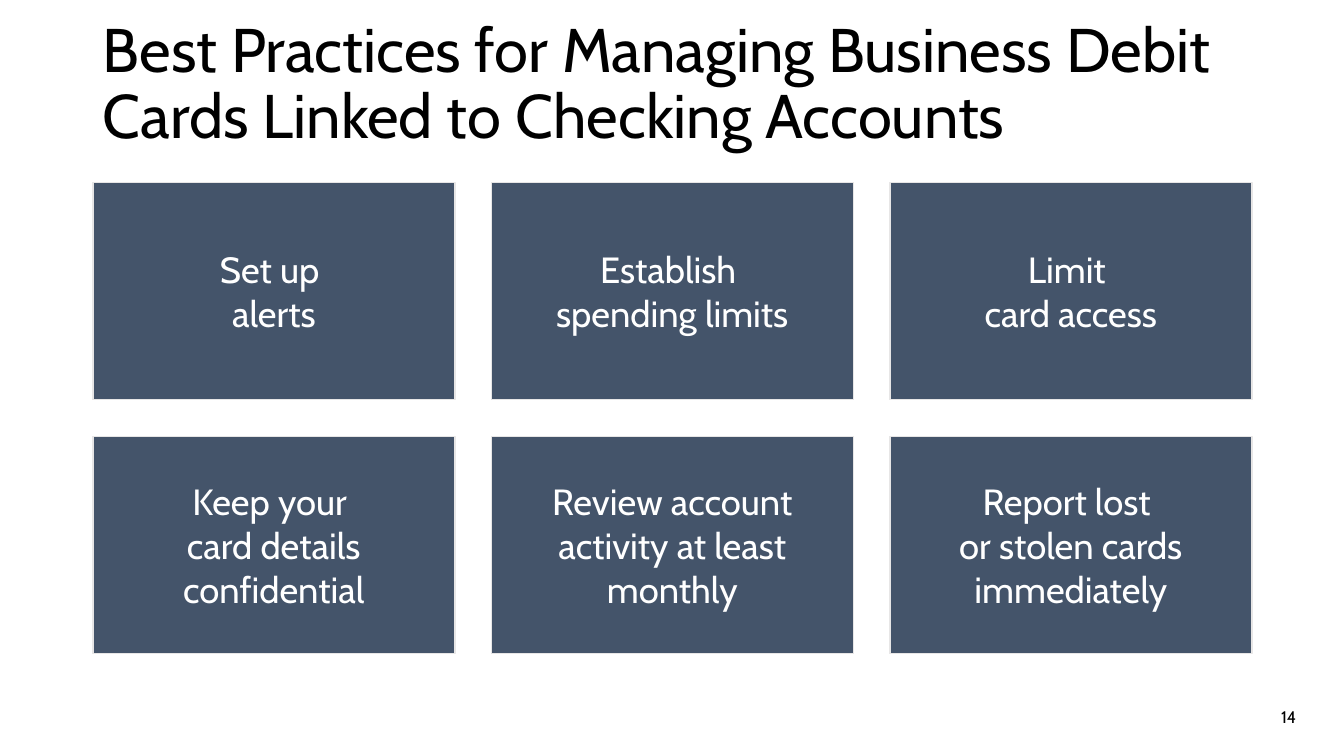
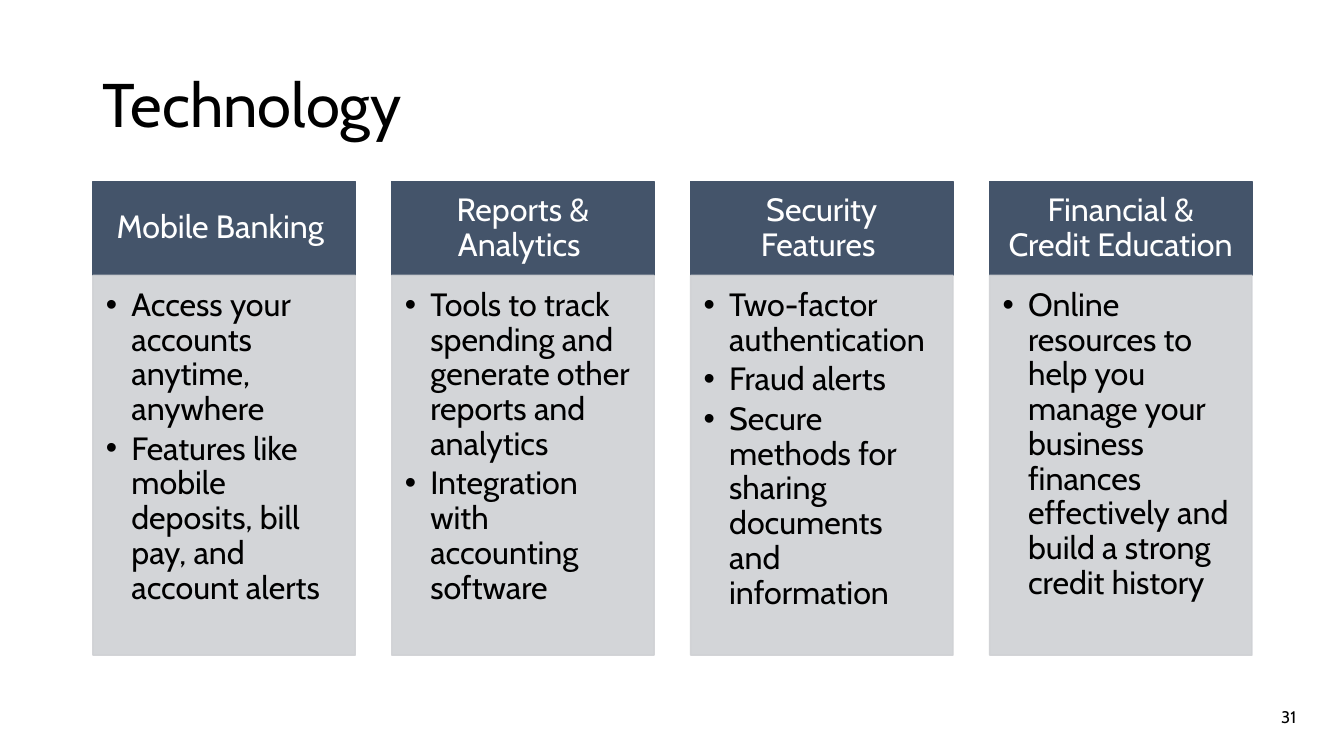
from lxml import etree
from pptx import Presentation
from pptx.dml.color import RGBColor
from pptx.enum import shapes, text
from pptx.oxml import ns
from pptx.util import Cm, Pt

NAVY = RGBColor(0x44, 0x54, 0x6A)
PALE = RGBColor(0xE7, 0xE6, 0xE6)
GREY = RGBColor(0xCF, 0xD1, 0xD4)
WHITE = RGBColor(0xFF, 0xFF, 0xFF)
BLACK = RGBColor(0, 0, 0)
FONT = "Cabin"

SLIDE_WIDTH, SLIDE_HEIGHT = Cm(33.87), Cm(19.05)
LEFT, CONTENT_WIDTH = Cm(2.34), Cm(29.21)
GAP = Cm(0.92)

TILES = [
    ["Set up ", "alerts"],
    ["Establish ", "spending limits"],
    ["Limit ", "card access"],
    ["Keep your ", "card details confidential"],
    ["Review account activity at least monthly"],
    ["Report lost ", "or stolen cards immediately"],
]
TECHNOLOGY = [
    ("Mobile Banking ", [
        "Access your accounts anytime, anywhere",
        "Features like mobile deposits, bill pay, and account alerts"]),
    ("Reports & Analytics ", [
        "Tools to track spending and generate other reports and analytics",
        "Integration with accounting software"]),
    ("Security Features ", [
        "Two-factor authentication",
        "Fraud alerts",
        "Secure methods for sharing documents and information"]),
    ("Financial & Credit Education", [
        "Online resources to help you manage your business finances "
        "effectively and build a strong credit history"]),
]


def write(shape, lines, size, color, align, anchor, line_spacing=1.0, margins=None):
    """Fill a shape with one paragraph per line; margins run left, top, right, bottom in cm."""
    frame = shape.text_frame
    frame.word_wrap = True
    frame.vertical_anchor = anchor
    if margins:
        (frame.margin_left, frame.margin_top,
         frame.margin_right, frame.margin_bottom) = map(Cm, margins)
    frame.text = "\n".join(lines)
    for paragraph in frame.paragraphs:
        paragraph.alignment = align
        paragraph.line_spacing = line_spacing
        for run in paragraph.runs:
            run.font.name = FONT
            run.font.size = Pt(size)
            run.font.color.rgb = color


def add_box(slide, box, fill, line):
    shape = slide.shapes.add_shape(shapes.MSO_SHAPE.RECTANGLE, *box)
    shape.shadow.inherit = False
    shape.fill.solid()
    shape.fill.fore_color.rgb = fill
    shape.line.color.rgb = line
    shape.line.width = Pt(1)
    return shape


def set_opacity(shape, percent):
    """Apply one opacity to both the fill and the outline."""
    for color in shape._element.spPr.iter(ns.qn("a:srgbClr")):
        etree.SubElement(color, ns.qn("a:alpha"), val=str(percent * 1000))


def add_bullets(shape):
    for paragraph in shape.text_frame.paragraphs:
        properties = paragraph._p.get_or_add_pPr()
        properties.set("marL", str(Cm(0.64)))
        properties.set("indent", str(-Cm(0.64)))
        etree.SubElement(properties, ns.qn("a:buFont"), typeface="Arial")
        etree.SubElement(properties, ns.qn("a:buChar"), char="•")
        paragraph.space_after = Pt(3.45)


def add_base_slide(presentation, title, title_height, number):
    """Add a blank slide with its title and page number."""
    slide = presentation.slides.add_slide(presentation.slide_layouts[6])
    title_box = slide.shapes.add_textbox(LEFT, 0, CONTENT_WIDTH, title_height)
    write(title_box, [title], 44, BLACK, text.PP_ALIGN.LEFT,
          text.MSO_ANCHOR.BOTTOM, 0.9)
    number_box = slide.shapes.add_textbox(Cm(25.3), Cm(17.55), Cm(7.62), Cm(1.02))
    write(number_box, [str(number)], 12, BLACK, text.PP_ALIGN.RIGHT,
          text.MSO_ANCHOR.MIDDLE)
    return slide


def add_tile_grid(slide, box, tiles, columns):
    left, top, width, height = box
    rows = -(-len(tiles) // columns)
    tile_width = (width - (columns - 1) * GAP) // columns
    tile_height = (height - (rows - 1) * GAP) // rows
    for index, lines in enumerate(tiles):
        row, column = divmod(index, columns)
        tile = add_box(slide, (left + column * (tile_width + GAP),
                               top + row * (tile_height + GAP),
                               tile_width, tile_height), NAVY, PALE)
        write(tile, lines, 26, WHITE, text.PP_ALIGN.CENTER,
              text.MSO_ANCHOR.MIDDLE, margins=[0.28] * 4)


def add_column(slide, box, heading, points):
    left, top, width, height = box
    header_height = Cm(2.37)
    header = add_box(slide, (left, top, width, header_height), NAVY, NAVY)
    write(header, [heading], 23, WHITE, text.PP_ALIGN.CENTER,
          text.MSO_ANCHOR.MIDDLE, 0.9, (0.46, 0.26, 0.46, 0.26))
    body = add_box(slide, (left, top + header_height, width, height - header_height),
                   GREY, GREY)
    set_opacity(body, 90)
    write(body, points, 23, BLACK, text.PP_ALIGN.LEFT,
          text.MSO_ANCHOR.TOP, 0.9, (0.33, 0.33, 0.46, 0.5))
    add_bullets(body)


def add_columns(slide, box, columns):
    left, top, width, height = box
    column_width = (width - (len(columns) - 1) * GAP) // len(columns)
    for index, (heading, points) in enumerate(columns):
        add_column(slide, (left + index * (column_width + GAP), top,
                           column_width, height), heading, points)


def main():
    presentation = Presentation()
    presentation.slide_width, presentation.slide_height = SLIDE_WIDTH, SLIDE_HEIGHT
    practices = add_base_slide(
        presentation,
        "Best Practices for Managing Business Debit Cards Linked to Checking Accounts",
        Cm(3.96), 14)
    add_tile_grid(practices, (LEFT, Cm(4.6), CONTENT_WIDTH, Cm(11.87)), TILES, 3)
    technology = add_base_slide(presentation, "Technology", Cm(3.68), 31)
    add_columns(technology, (LEFT, Cm(4.57), CONTENT_WIDTH, Cm(11.94)), TECHNOLOGY)
    presentation.save("out.pptx")


if __name__ == "__main__":
    main()
